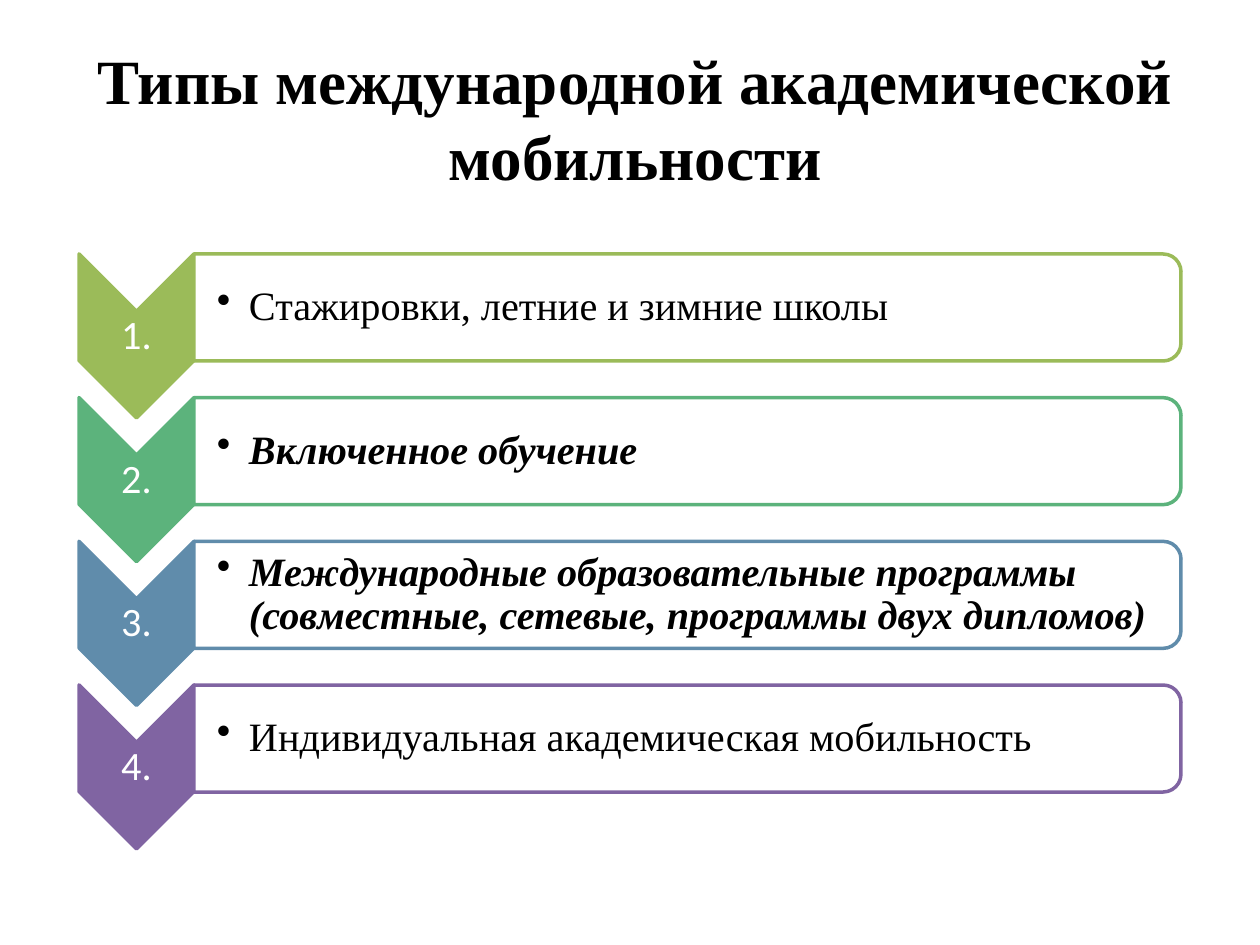
import pptx
import pptx.util
import pptx.dml.color
import pptx.enum.shapes
import pptx.enum.text
import lxml.etree

TITLE = "Типы международной академической мобильности"
# text, colour, stressed
STEPS = [
    ("Стажировки, летние и зимние школы", "9BBB59", False),
    ("Включенное обучение", "5CB37C", True),
    ("Международные образовательные программы "
     "(совместные, сетевые, программы двух дипломов)", "608CAB", True),
    ("Индивидуальная академическая мобильность", "8064A2", False),
]
THEME = {
    "serif": "Times New Roman", "sans": "Calibri",
    "ink": "000000", "paper": "FFFFFF",
    "title": 36, "text": 23, "line": 2,
}

# Layout in px, 126 to the inch
EMU = 914400 / 126
WIDE, HIGH = 1260, 945
LEFT, TOP, SPAN = 79, 254, 431  # span: first row top to last row top
TIP_W, TIP_H = 115, 164
BAR_W, BAR_H = 987, 107
TAG_DOWN, TAG_H = 58, 49
PAD, GAP, INDENT = 2, 23, 32

SHAPE = pptx.enum.shapes.MSO_SHAPE
ALIGN = pptx.enum.text.PP_ALIGN


def px(n):
    return pptx.util.Emu(round(n * EMU))


def rgb(code):
    return pptx.dml.color.RGBColor.from_string(code)


def add_text(slide, box, text, font, size, color, align, inset=None,
             bold=False, italic=False):
    shape = slide.shapes.add_textbox(*map(px, box))
    frame = shape.text_frame
    frame.word_wrap = True
    frame.vertical_anchor = pptx.enum.text.MSO_ANCHOR.MIDDLE
    if inset:
        frame.margin_left = px(inset)
        frame.margin_right = frame.margin_top = frame.margin_bottom = px(PAD)
    frame.text = text
    para = frame.paragraphs[0]
    para.alignment = align
    face = para.runs[0].font
    face.name, face.size = font, pptx.util.Pt(size)
    face.color.rgb = rgb(color)
    face.bold, face.italic = bold, italic
    return para


def add_turned(slide, kind, box, fill, line):
    """Add a shape turned by 90 degrees that covers box once turned."""
    x, y, w, h = box
    shift = (w - h) / 2
    shape = slide.shapes.add_shape(
        kind, px(x + shift), px(y - shift), px(h), px(w))
    shape.rotation = 90
    shape.shadow.inherit = False
    shape.fill.solid()
    shape.fill.fore_color.rgb = rgb(fill)
    shape.line.color.rgb = rgb(line)
    shape.line.width = pptx.util.Pt(THEME["line"])
    return shape


def add_bullet(para):
    props = para._p.get_or_add_pPr()
    props.set("marL", str(px(INDENT)))
    props.set("indent", str(-px(INDENT)))
    mark = lxml.etree.SubElement(props, pptx.oxml.ns.qn("a:buChar"))
    mark.set("char", "•")


def add_step(slide, num, top, text, color, stress):
    add_turned(slide, SHAPE.CHEVRON, (LEFT, top, TIP_W, TIP_H), color, color)
    tag = add_text(slide, (LEFT, top + TAG_DOWN, TIP_W, TAG_H), f"{num}.",
                   THEME["sans"], THEME["text"], THEME["paper"],
                   ALIGN.CENTER, PAD)
    tag.line_spacing = 0.9

    bar = LEFT + TIP_W
    add_turned(slide, SHAPE.ROUND_2_SAME_RECTANGLE,
               (bar, top, BAR_W, BAR_H), THEME["paper"], color)
    para = add_text(slide, (bar, top + 5, BAR_W - 5, BAR_H - 10), text,
                    THEME["serif"], THEME["text"], THEME["ink"],
                    ALIGN.LEFT, GAP, stress, stress)
    para.line_spacing = 0.9
    add_bullet(para)


def main():
    deck = pptx.Presentation()
    deck.slide_width, deck.slide_height = px(WIDE), px(HIGH)
    slide = deck.slides.add_slide(deck.slide_layouts[6])
    add_text(slide, (64, 16, 1142, 203), TITLE, THEME["serif"],
             THEME["title"], THEME["ink"], ALIGN.CENTER, bold=True)
    pitch = SPAN / (len(STEPS) - 1)
    for i, step in enumerate(STEPS):
        add_step(slide, i + 1, TOP + i * pitch, *step)
    deck.save("out.pptx")


if __name__ == "__main__":
    main()
